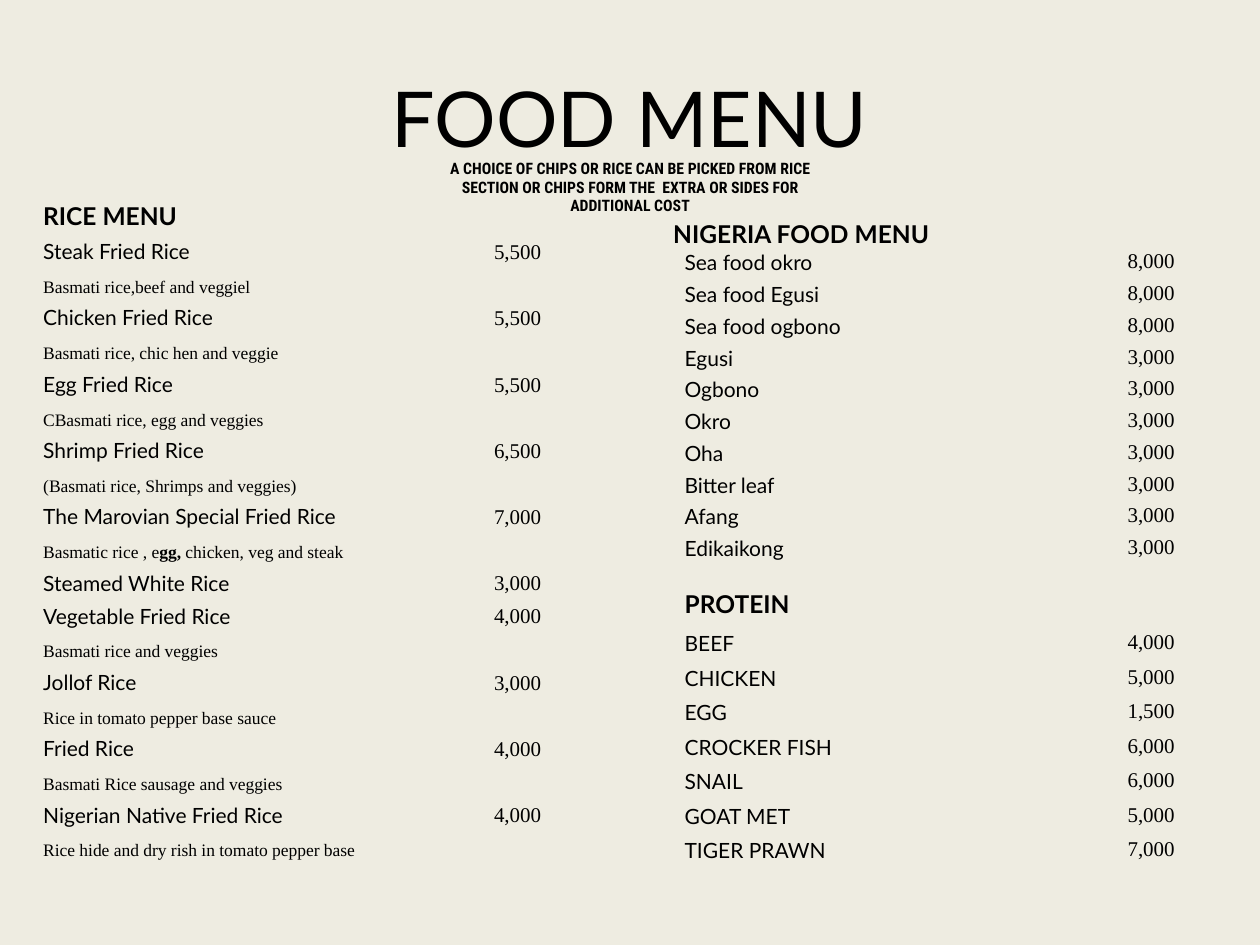
"""Build a food menu slide with a title, a note and three price tables."""
from dataclasses import dataclass

from lxml import etree
from pptx import Presentation
from pptx.dml.color import RGBColor
from pptx.enum.text import MSO_ANCHOR, PP_ALIGN
from pptx.oxml.ns import qn
from pptx.util import Pt

LEFT, CENTER, RIGHT = PP_ALIGN.LEFT, PP_ALIGN.CENTER, PP_ALIGN.RIGHT
TOP, MIDDLE, BOTTOM = MSO_ANCHOR.TOP, MSO_ANCHOR.MIDDLE, MSO_ANCHOR.BOTTOM
PLAIN_TABLE_STYLE = "{2D5ABB26-0587-4C30-8999-92F81FD0307C}"


@dataclass(frozen=True)
class Theme:
    """Colours, fonts and type sizes of the menu."""
    background: RGBColor = RGBColor(0xEE, 0xEC, 0xE1)
    ink: RGBColor = RGBColor(0, 0, 0)
    heading_font: str = "Lato"
    note_font: str = "Roboto Condensed"
    detail_font: str = "Times New Roman"
    title_size: int = 44
    section_size: int = 14
    dish_size: int = 12
    detail_size: int = 10
    note_size: int = 9


THEME = Theme()

RICE_DISHES = [
    ("Steak Fried Rice", "5,500", ["Basmati rice,beef and veggiel"]),
    ("Chicken Fried Rice", "5,500", ["Basmati rice, chic hen and veggie"]),
    ("Egg Fried Rice", "5,500", ["CBasmati rice, egg and veggies"]),
    ("Shrimp Fried Rice", "6,500", ["(Basmati rice, Shrimps and veggies)"]),
    ("The Marovian Special Fried Rice", "7,000",
     ["Basmatic rice , e", "gg, ", "chicken, veg and steak"]),
    ("Steamed White Rice", "3,000", []),
    ("Vegetable Fried Rice", "4,000", ["Basmati rice and veggies"]),
    ("Jollof Rice", "3,000", ["Rice in tomato pepper base sauce"]),
    ("Fried Rice", "4,000", ["Basmati Rice sausage and veggies"]),
    ("Nigerian Native Fried Rice", "4,000",
     ["Rice hide and dry rish in tomato pepper base"]),
]
NIGERIAN_DISHES = [
    ("Sea food okro", "8,000"), ("Sea food Egusi", "8,000"),
    ("Sea food ogbono", "8,000"), ("Egusi", "3,000"), ("Ogbono", "3,000"),
    ("Okro", "3,000"), ("Oha", "3,000"), ("Bitter leaf", "3,000"),
    ("Afang", "3,000"), ("Edikaikong", "3,000"),
]
PROTEINS = [
    ("BEEF", "4,000"), ("CHICKEN", "5,000"), ("EGG", "1,500"),
    ("CROCKER FISH", "6,000"), ("SNAIL", "6,000"), ("GOAT MET", "5,000"),
    ("TIGER PRAWN", "7,000"),
]


def write_text(paragraph, text, font=THEME.heading_font, size=THEME.dish_size,
               bold=False, align=LEFT):
    """Append one formatted run to a paragraph."""
    paragraph.alignment = align
    run = paragraph.add_run()
    run.text = text
    run.font.name = font
    run.font.size = Pt(size)
    run.font.bold = bold
    run.font.color.rgb = THEME.ink


def add_title(slide, text):
    """Add the centred menu title."""
    shape = slide.shapes.add_textbox(Pt(36), Pt(21.6), Pt(648), Pt(90))
    shape.text_frame.word_wrap = True
    shape.text_frame.vertical_anchor = MIDDLE
    write_text(shape.text_frame.paragraphs[0], text, size=THEME.title_size, align=CENTER)


def add_plain_table(slide, left, top, column_widths, row_heights):
    """Add a table without fills, borders or banding."""
    frame = slide.shapes.add_table(
        len(row_heights), len(column_widths), Pt(left), Pt(top),
        Pt(sum(column_widths)), Pt(sum(row_heights)))
    frame._element.find(".//" + qn("a:tableStyleId")).text = PLAIN_TABLE_STYLE
    table = frame.table
    table.first_row = table.horz_banding = False
    for column, width in zip(table.columns, column_widths):
        column.width = Pt(width)
    for row, height in zip(table.rows, row_heights):
        row.height = Pt(height)
    return table


def fill_cell(cell, texts, anchor=BOTTOM, indent=0.7, bold_index=None, **text_format):
    """Set up a cell and write its runs, keeping an empty cell low."""
    cell.fill.background()
    cell.vertical_anchor = anchor
    cell.margin_left = Pt(indent)
    cell.margin_top = cell.margin_right = Pt(0.7)
    cell.margin_bottom = Pt(0)
    paragraph = cell.text_frame.paragraphs[0]
    for index, text in enumerate(texts):
        bold = text_format.get("bold", False) or index == bold_index
        write_text(paragraph, text, **{**text_format, "bold": bold})
    if not texts:
        etree.SubElement(paragraph._p, qn("a:endParaRPr"), sz=str(THEME.detail_size * 100))


def add_note(slide, text):
    """Add the one-cell table under the title."""
    table = add_plain_table(slide, 240, 90, [240], [18])
    fill_cell(table.cell(0, 0), [text], font=THEME.note_font,
              size=THEME.note_size, bold=True, align=CENTER)


def add_section(slide, heading, rows, left, top, column_widths, heading_height,
                height, anchor=TOP, heading_anchor=TOP, indent=7.2, heading_indent=7.2):
    """Add a heading row followed by equal rows of dishes or details."""
    row_height = (height - heading_height) / len(rows)
    table = add_plain_table(slide, left, top, column_widths,
                            [heading_height] + [row_height] * len(rows))
    fill_cell(table.cell(0, 0), [heading], anchor=heading_anchor,
              indent=heading_indent, size=THEME.section_size, bold=True)
    fill_cell(table.cell(0, 1), [])
    for index, (texts, price) in enumerate(rows, start=1):
        name_cell, price_cell = table.cell(index, 0), table.cell(index, 1)
        if price:
            fill_cell(name_cell, texts, anchor=anchor, indent=indent)
            fill_cell(price_cell, [price], anchor=anchor,
                      font=THEME.detail_font, align=RIGHT)
        else:
            fill_cell(name_cell, texts, anchor=anchor, indent=indent, bold_index=1,
                      font=THEME.detail_font, size=THEME.detail_size)
            fill_cell(price_cell, [])


def rice_rows():
    """List each rice dish followed by its ingredients, if any."""
    rows = []
    for name, price, details in RICE_DISHES:
        rows.append(([name], price))
        if details:
            rows.append((details, None))
    return rows


def priced_rows(dishes):
    """List dishes that have a price and no ingredients."""
    return [([name], price) for name, price in dishes]


def main():
    """Build and save the slide."""
    presentation = Presentation()
    presentation.slide_width, presentation.slide_height = Pt(720), Pt(540)
    slide = presentation.slides.add_slide(presentation.slide_layouts[6])
    slide.background.fill.solid()
    slide.background.fill.fore_color.rgb = THEME.background
    add_title(slide, "FOOD MENU")
    add_note(slide, "A CHOICE OF CHIPS OR RICE CAN BE PICKED FROM RICE SECTION "
                    "OR CHIPS FORM THE  EXTRA OR SIDES FOR ADDITIONAL COST")
    add_section(slide, "RICE MENU", rice_rows(), 24, 108, [238.3, 47.7], 24, 384,
                anchor=BOTTOM, heading_anchor=BOTTOM, indent=0.7, heading_indent=0.7)
    add_section(slide, "NIGERIA FOOD MENU", priced_rows(NIGERIAN_DISHES),
                384, 120, [240, 48], 22.3, 204, heading_anchor=BOTTOM, heading_indent=0.7)
    add_section(slide, "PROTEIN", priced_rows(PROTEINS), 384, 336, [240, 48], 24, 162)
    presentation.save("out.pptx")


if __name__ == "__main__":
    main()
